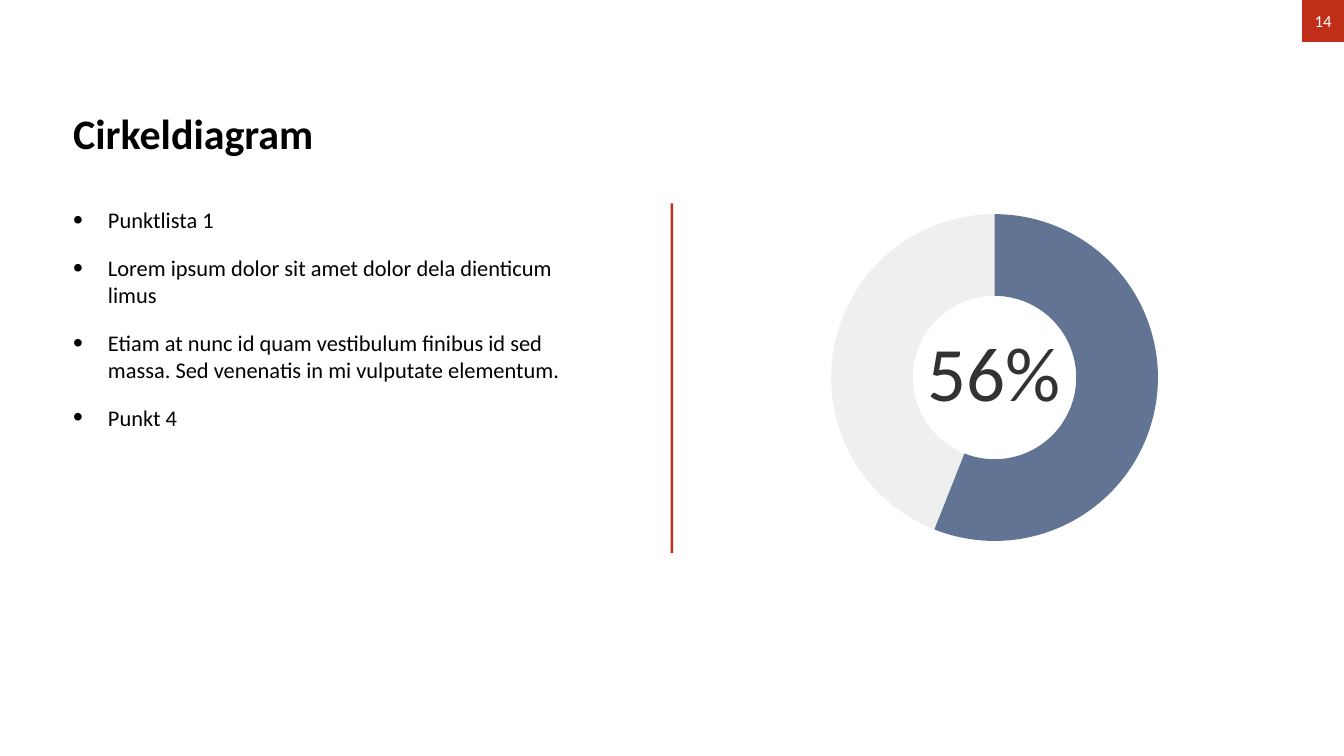
from pptx import Presentation
from pptx.chart.data import CategoryChartData as Data
from pptx.dml.color import RGBColor as Rgb
from pptx.enum.chart import XL_CHART_TYPE as Kind
from pptx.enum.shapes import MSO_SHAPE as Form
from pptx.enum.text import MSO_ANCHOR as Anchor, MSO_AUTO_SIZE as Fit, PP_ALIGN as Align
from pptx.oxml import parse_xml
from pptx.oxml.ns import nsdecls, qn
from pptx.util import Inches, Pt

COLS, ROWS = 32, 18
UNIT = Inches(15 / ROWS)
FONT = "Calibri"
HEX = {"red": "C02D18", "ink": "000000", "pale": "FFFFFF",
       "dark": "323232", "blue": "617493", "gray": "999999"}
POINTS = ["Punktlista 1",
          "Lorem ipsum dolor sit amet dolor dela dienticum limus",
          "Etiam at nunc id quam vestibulum finibus id sed massa. "
          "Sed venenatis in mi vulputate elementum.",
          "Punkt 4"]


def grid(*cells):
    """Turn columns and rows into slide lengths."""
    return [round(cell * UNIT) for cell in cells]


def style(font, size, tint, bold=False):
    """Set the face, size, colour and weight of a font."""
    font.name, font.size, font.bold = FONT, Pt(size), bold
    font.color.rgb = Rgb.from_string(HEX[tint])


def block(slide, cells, tint):
    """Add a plain filled rectangle."""
    shape = slide.shapes.add_shape(Form.RECTANGLE, *grid(*cells))
    shape.shadow.inherit = False
    shape.fill.solid()
    shape.fill.fore_color.rgb = Rgb.from_string(HEX[tint])
    shape.line.fill.background()
    return shape


def textbox(slide, cells, anchor, wrap=True):
    """Add an empty text box with thin margins."""
    frame = slide.shapes.add_textbox(*grid(*cells)).text_frame
    frame.word_wrap, frame.vertical_anchor = wrap, anchor
    frame.margin_left = frame.margin_right = Inches(0.06)
    frame.margin_top = frame.margin_bottom = Inches(0.06)
    return frame


def write(frame, text, size, tint, align=Align.LEFT, bold=False):
    """Fill the first paragraph of a frame."""
    para = frame.paragraphs[0]
    para.text, para.alignment = text, align
    style(para.font, size, tint, bold)


def bullets(frame, items):
    """Write a bulleted list with even gaps."""
    for rank, item in enumerate(items):
        para = frame.add_paragraph() if rank else frame.paragraphs[0]
        para.text = item
        para.space_before = Pt(30 if rank else 0)
        props = para._p.get_or_add_pPr()
        props.set("marL", str(Inches(0.69)))
        props.set("indent", str(-Inches(0.69)))
        for mark in ('buSzPct val="125000"', 'buFont typeface="Arial"', 'buChar char="•"'):
            props.append(parse_xml(f'<a:{mark} {nsdecls("a")}/>'))
        style(para.font, 32, "ink")


def ring(slide, cells, share):
    """Add a doughnut chart of one share and its rest."""
    data = Data()
    data.categories = ["1", "2"]
    data.add_series("Series 1", (share, 100 - share))
    chart = slide.shapes.add_chart(Kind.DOUGHNUT, *grid(*cells), data).chart
    chart.has_legend = chart.has_title = False
    style(chart.font, 10, "dark")
    plot = chart.plots[0]
    plot.vary_by_categories = False
    series = plot.series[0]
    for target, tint in ((series, "red"), (series.points[0], "blue"), (series.points[1], "gray")):
        target.format.fill.solid()
        target.format.fill.fore_color.rgb = Rgb.from_string(HEX[tint])
        target.format.line.fill.background()
    rest = series.points[1].format.fill._xPr.find(qn("a:solidFill"))[0]
    rest.append(parse_xml(f'<a:alpha {nsdecls("a")} val="15000"/>'))
    area = chart._chartSpace.chart.plotArea
    area.find(qn("c:doughnutChart")).find(qn("c:holeSize")).set("val", "89")
    for old in area.findall(qn("c:layout")):
        area.remove(old)
    rules = (("layoutTarget", "inner"), ("xMode", "edge"), ("yMode", "edge"),
             ("x", 0.005), ("y", 0.005), ("w", 0.99), ("h", 0.99))
    inner = "".join(f'<c:{name} val="{val}"/>' for name, val in rules)
    area.insert(0, parse_xml(f'<c:layout {nsdecls("c")}><c:manualLayout>{inner}'
                             '</c:manualLayout></c:layout>'))


def main():
    """Build and save the slide."""
    deck = Presentation()
    deck.slide_width, deck.slide_height = grid(COLS, ROWS)
    slide = deck.slides.add_slide(deck.slide_layouts[6])
    left, top = 1.67, 4.84
    block(slide, (COLS / 2 - 0.03, top, 0.06, 8.33), "red")
    title = textbox(slide, (left, 0.83, 27.56, 3), Anchor.BOTTOM)
    write(title, "Cirkeldiagram", 60, "ink", bold=True)
    tag = block(slide, (COLS - 1, 0, 1, 1), "red").text_frame
    tag.vertical_anchor, tag.word_wrap = Anchor.MIDDLE, False
    write(tag, "14", 24, "pale", Align.CENTER)
    bullets(textbox(slide, (left, top, 12.8, 8.12), Anchor.TOP), POINTS)
    share = 56
    ring(slide, (19.75, 5.06, 7.86, 7.86), share)
    label = textbox(slide, (22.02, 7.64, 3.32, 2.39), Anchor.MIDDLE, wrap=False)
    label.auto_size = Fit.SHAPE_TO_FIT_TEXT
    write(label, f"{share}%", 110, "dark", Align.CENTER)
    deck.save("out.pptx")


if __name__ == "__main__":
    main()
